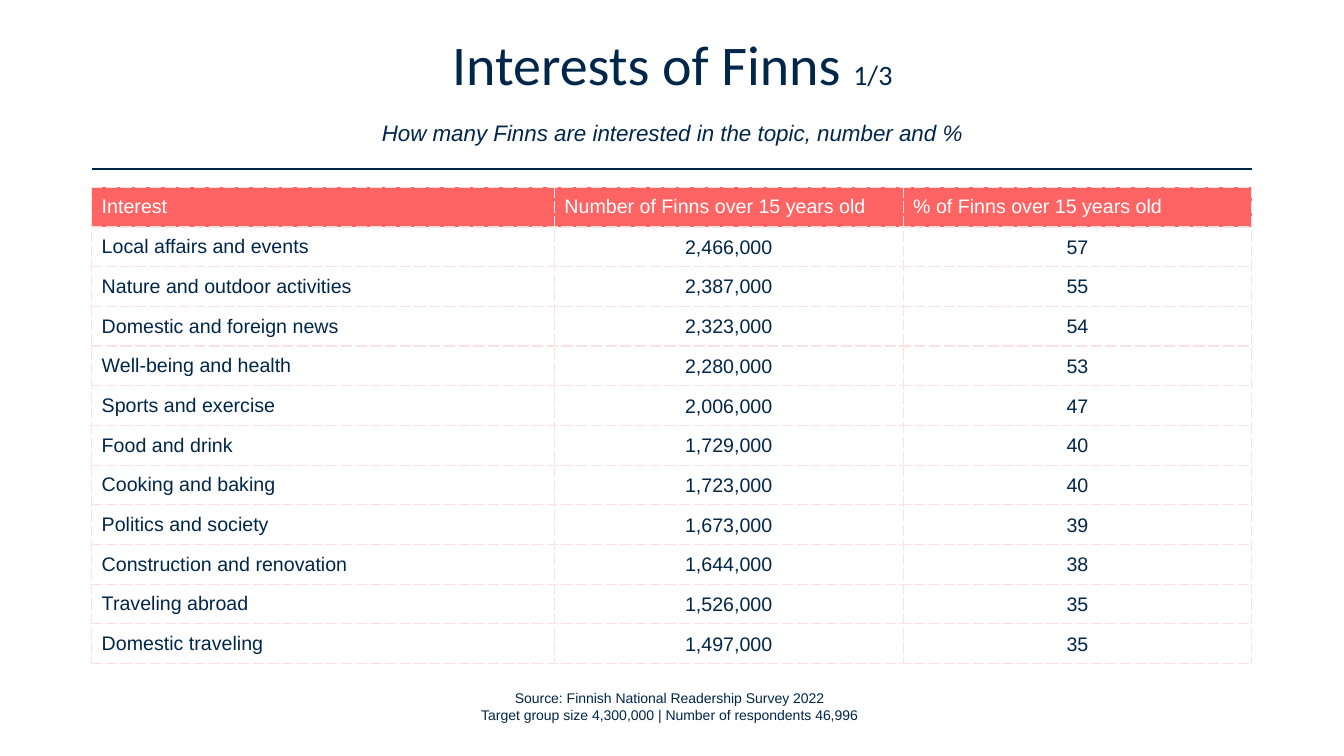
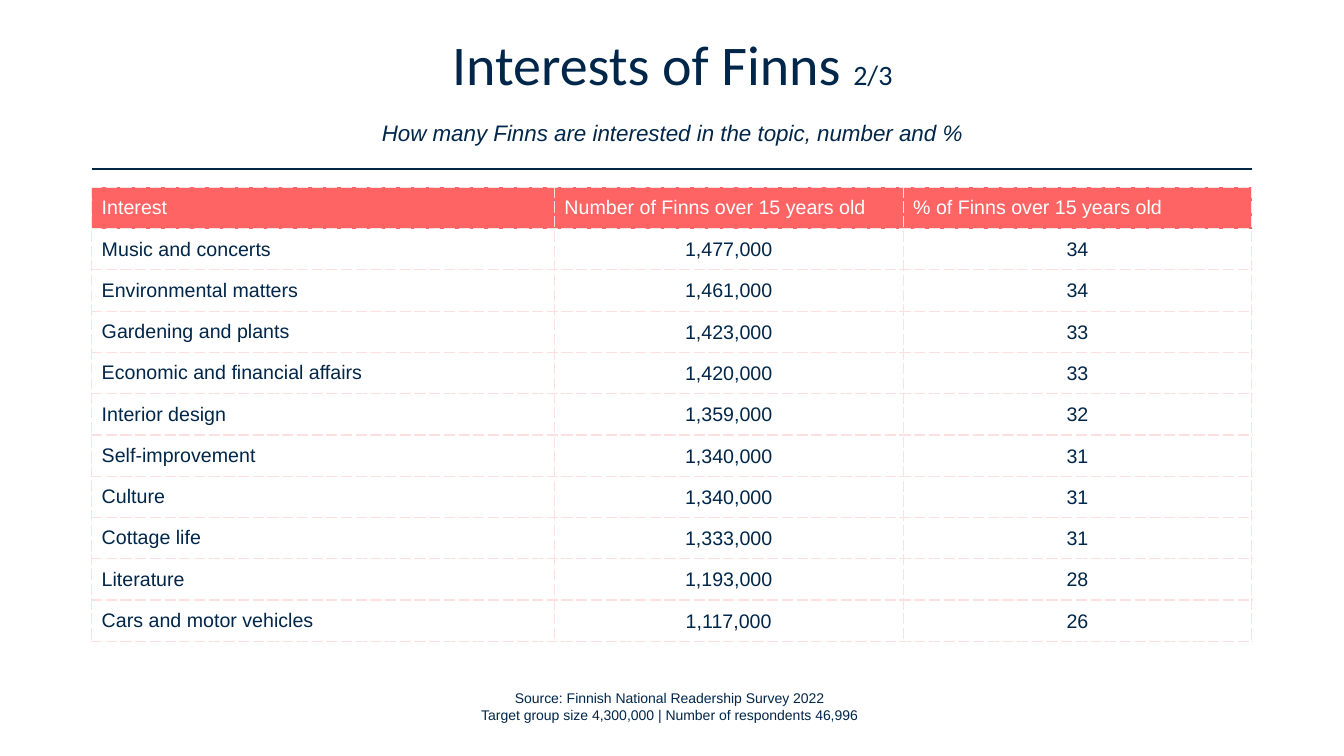
from lxml import etree
from pptx import Presentation
from pptx.dml.color import RGBColor
from pptx.enum.shapes import MSO_CONNECTOR
from pptx.enum.text import MSO_ANCHOR, PP_ALIGN
from pptx.oxml import parse_xml
from pptx.oxml.ns import nsdecls, qn
from pptx.util import Cm, Pt

NAVY = RGBColor(0x00, 0x26, 0x49)
CORAL = RGBColor(0xFF, 0x64, 0x64)
PINK = RGBColor(0xFF, 0xE0, 0xE0)
WHITE = RGBColor(0xFF, 0xFF, 0xFF)
CENTER, LEFT = PP_ALIGN.CENTER, PP_ALIGN.LEFT
MIDDLE = MSO_ANCHOR.MIDDLE
STRAIGHT = MSO_CONNECTOR.STRAIGHT

EDGE = 2.31
WIDTHS = [11.66, 8.79, 8.79]
HEADS = ["Interest", "Number of Finns over 15 years old",
         "% of Finns over 15 years old"]
SOURCE = ["Source: Finnish National Readership Survey 2022",
          "Target group size 4,300,000 | Number of respondents 46,996"]

# Each page: part number, row height in cm, rows
PAGES = [
    ("1/3", 1.0, [
        ("Local affairs and events", "2,466,000", "57"),
        ("Nature and outdoor activities", "2,387,000", "55"),
        ("Domestic and foreign news", "2,323,000", "54"),
        ("Well-being and health", "2,280,000", "53"),
        ("Sports and exercise", "2,006,000", "47"),
        ("Food and drink", "1,729,000", "40"),
        ("Cooking and baking", "1,723,000", "40"),
        ("Politics and society", "1,673,000", "39"),
        ("Construction and renovation", "1,644,000", "38"),
        ("Traveling abroad", "1,526,000", "35"),
        ("Domestic traveling", "1,497,000", "35"),
    ]),
    ("2/3", 1.04, [
        ("Music and concerts", "1,477,000", "34"),
        ("Environmental matters", "1,461,000", "34"),
        ("Gardening and plants", "1,423,000", "33"),
        ("Economic and financial affairs", "1,420,000", "33"),
        ("Interior design", "1,359,000", "32"),
        ("Self-improvement", "1,340,000", "31"),
        ("Culture", "1,340,000", "31"),
        ("Cottage life", "1,333,000", "31"),
        ("Literature", "1,193,000", "28"),
        ("Cars and motor vehicles", "1,117,000", "26"),
    ]),
]


def add_run(para, text, size, color=NAVY, name="Arial", italic=False):
    run = para.add_run()
    run.text = text
    font = run.font
    font.size, font.name, font.italic = Pt(size), name, italic
    font.color.rgb = color


def set_edges(cell):
    props = cell._tc.get_or_add_tcPr()
    for spot, side in enumerate(("lnL", "lnR", "lnT", "lnB")):
        props.insert(spot, parse_xml(
            f'<a:{side} {nsdecls("a")} w="12700"><a:solidFill>'
            f'<a:srgbClr val="{PINK}"/></a:solidFill>'
            f'<a:prstDash val="sysDash"/></a:{side}>'))


deck = Presentation()
deck.slide_width, deck.slide_height = Cm(33.87), Cm(19.05)
blank = deck.slide_layouts[6]

for part, height, rows in PAGES:
    slide = deck.slides.add_slide(blank)

    # Title and subtitle
    box = slide.shapes.add_textbox(Cm(2.34), Cm(1.07), Cm(29.21), Cm(2.72))
    frame = box.text_frame
    frame.word_wrap, frame.vertical_anchor = True, MIDDLE
    para = frame.paragraphs[0]
    para.alignment = CENTER
    para.line_spacing, para.space_after = Pt(35), Pt(18)
    add_run(para, "Interests of Finns ", 40, name="Calibri")
    add_run(para, part, 20, name="Calibri")
    para.add_line_break()
    add_run(para, "How many Finns are interested in the topic, number and %",
            16, italic=True)

    # Rule under the title
    rule = slide.shapes.add_connector(
        STRAIGHT, Cm(EDGE), Cm(4.27), Cm(EDGE + sum(WIDTHS)), Cm(4.27))
    rule.line.color.rgb, rule.line.width = NAVY, Pt(1.5)
    etree.SubElement(rule._element.spPr, qn("a:effectLst"))

    # Table
    lines = [HEADS] + rows
    table = slide.shapes.add_table(
        len(lines), len(WIDTHS), Cm(EDGE), Cm(4.72),
        Cm(sum(WIDTHS)), Cm(height * len(lines))).table
    table.first_row = table.horz_banding = False
    for col, width in zip(table.columns, WIDTHS):
        col.width = Cm(width)
    for r, line in enumerate(lines):
        table.rows[r].height = Cm(height)
        for c, text in enumerate(line):
            cell = table.cell(r, c)
            cell.vertical_anchor = MIDDLE
            if r == 0:
                cell.fill.solid()
                cell.fill.fore_color.rgb = CORAL
            else:
                cell.fill.background()
            set_edges(cell)
            para = cell.text_frame.paragraphs[0]
            para.alignment = CENTER if r and c else LEFT
            if r and c:
                cell.margin_left = cell.margin_right = Cm(0.03)
                cell.margin_top, cell.margin_bottom = Cm(0.03), Cm(0)
            add_run(para, text, 14, NAVY if r else WHITE)

    # Source note
    box = slide.shapes.add_textbox(Cm(10.29), Cm(17.25), Cm(13.16), Cm(1.12))
    box.text_frame.word_wrap = True
    para = box.text_frame.paragraphs[0]
    para.alignment = CENTER
    add_run(para, SOURCE[0], 10)
    para.add_line_break()
    add_run(para, SOURCE[1], 10)

deck.save("out.pptx")
